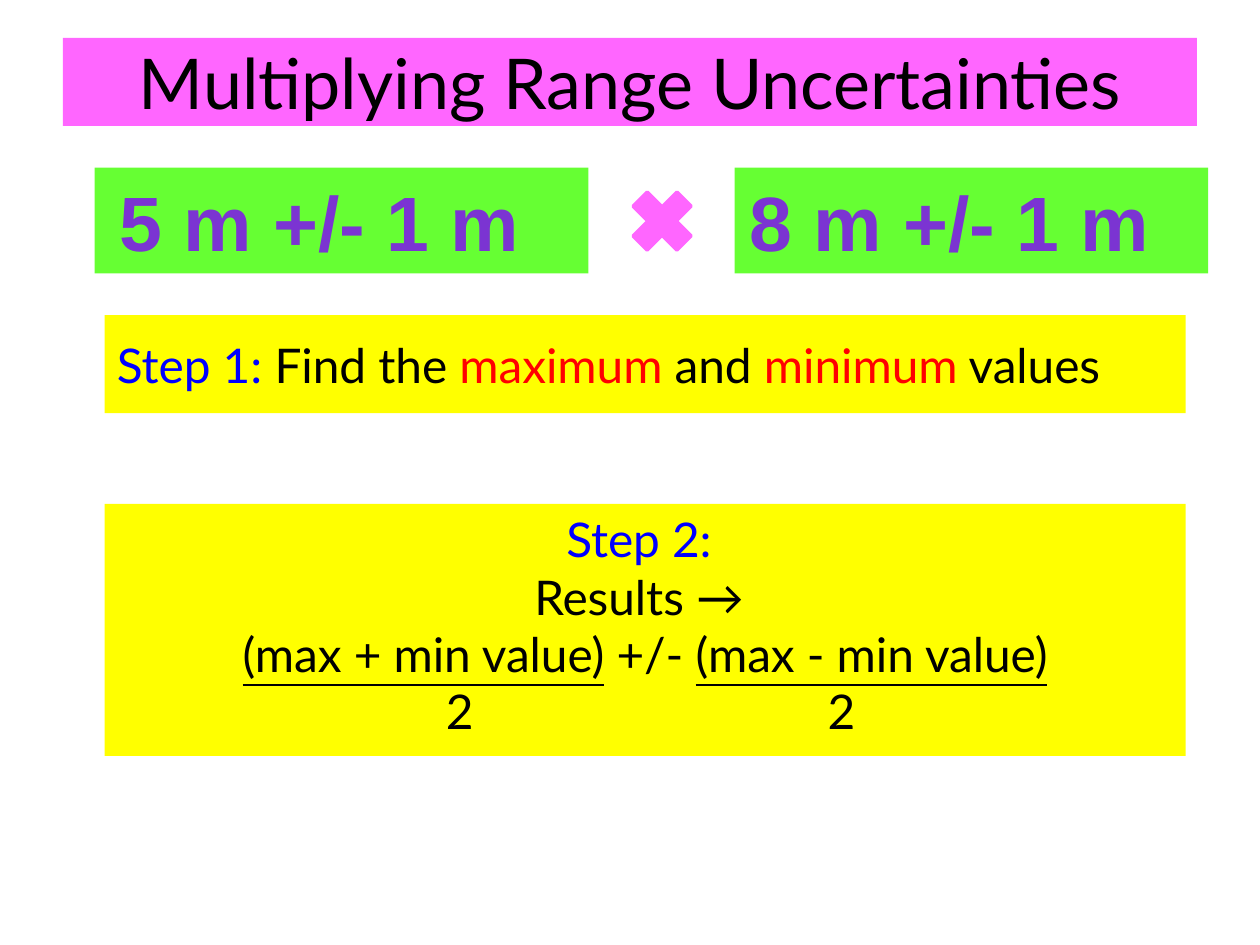
from lxml import etree
from pptx import Presentation
from pptx import util as u
from pptx.dml.color import RGBColor
from pptx.enum import shapes, text
from pptx.oxml.ns import qn

PINK, GREEN, YELLOW = "FF66FF", "66FF33", "FFFF00"
BLACK, BLUE, RED, PURPLE = "000000", "0000FF", "FF0000", "7B34D2"
CENTER, LEFT = text.PP_ALIGN.CENTER, text.PP_ALIGN.LEFT
MIDDLE, TOP = text.MSO_ANCHOR.MIDDLE, text.MSO_ANCHOR.TOP

# Content: each paragraph is a list of (text, colour, underlined) runs
TITLE = [[("Multiplying Range Uncertainties", BLACK, False)]]
FACTORS = [  # left, width, value
    (0.75, 3.92, "5 m +/- 1 m"),
    (5.83, 3.76, "8 m +/- 1 m"),
]
STEP_1 = [[
    ("Step 1: ", BLUE, False),
    ("Find the ", BLACK, False),
    ("maximum", RED, False),
    (" and ", BLACK, False),
    ("minimum", RED, False),
    (" values", BLACK, False),
]]
STEP_2 = [
    [("Step 2: ", BLUE, False)],
    [("Results → ", BLACK, False)],
    [("(max + min value)", BLACK, True),
     (" +/- ", BLACK, False),
     ("(max - min value)", BLACK, True)],
    [("\t2\t2", BLACK, False)],
]
DENOMINATOR_TABS = [2.72, 5.75]  # from the left edge of the text


def color(value):
    return RGBColor.from_string(value)


def add_box(page, place, fill, kind=shapes.MSO_SHAPE.RECTANGLE):
    box = page.shapes.add_shape(kind, *[u.Inches(n) for n in place])
    box.shadow.inherit = False
    box.fill.solid()
    box.fill.fore_color.rgb = color(fill)
    box.line.fill.background()
    return box


def write(box, paragraphs, size, font="Lato", bold=False, align=CENTER,
          anchor=MIDDLE, right_inset=0.1):
    frame = box.text_frame
    frame.word_wrap = True
    frame.vertical_anchor = anchor
    frame.margin_right = u.Inches(right_inset)
    for index, runs in enumerate(paragraphs):
        para = frame.add_paragraph() if index else frame.paragraphs[0]
        para.alignment = align
        for words, ink, underlined in runs:
            span = para.add_run()
            span.text = words
            span.font.name = font
            span.font.size = u.Pt(size)
            span.font.bold = bold
            span.font.underline = underlined
            span.font.color.rgb = color(ink)


def set_center_tabs(para, positions):
    para.alignment = LEFT
    tabs = etree.SubElement(para._p.get_or_add_pPr(), qn("a:tabLst"))
    for position in positions:
        etree.SubElement(tabs, qn("a:tab"), pos=str(u.Inches(position)), algn="ctr")


deck = Presentation()
deck.slide_width, deck.slide_height = u.Inches(10), u.Inches(7.5)
page = deck.slides.add_slide(deck.slide_layouts[6])

# Title band
write(add_box(page, (0.5, 0.3, 9, 0.7), PINK), TITLE, 40)

# The two factors and the multiplication sign
for left, width, value in FACTORS:
    box = add_box(page, (left, 1.33, width, 0.84), GREEN)
    write(box, [[(value, PURPLE, False)]], 44, "Arial", bold=True, right_inset=0.44)
sign = add_box(page, (4.92, 1.42, 0.67, 0.67), PINK, shapes.MSO_SHAPE.MATH_MULTIPLY)
sign.line.color.rgb = color(PINK)
sign.line.width = u.Pt(2)

# Steps
write(add_box(page, (0.83, 2.5, 8.58, 0.78), YELLOW), STEP_1, 27.3, align=LEFT)
result = add_box(page, (0.83, 4, 8.58, 2), YELLOW)
write(result, STEP_2, 27.3, anchor=TOP)
set_center_tabs(result.text_frame.paragraphs[-1], DENOMINATOR_TABS)

deck.save("out.pptx")
